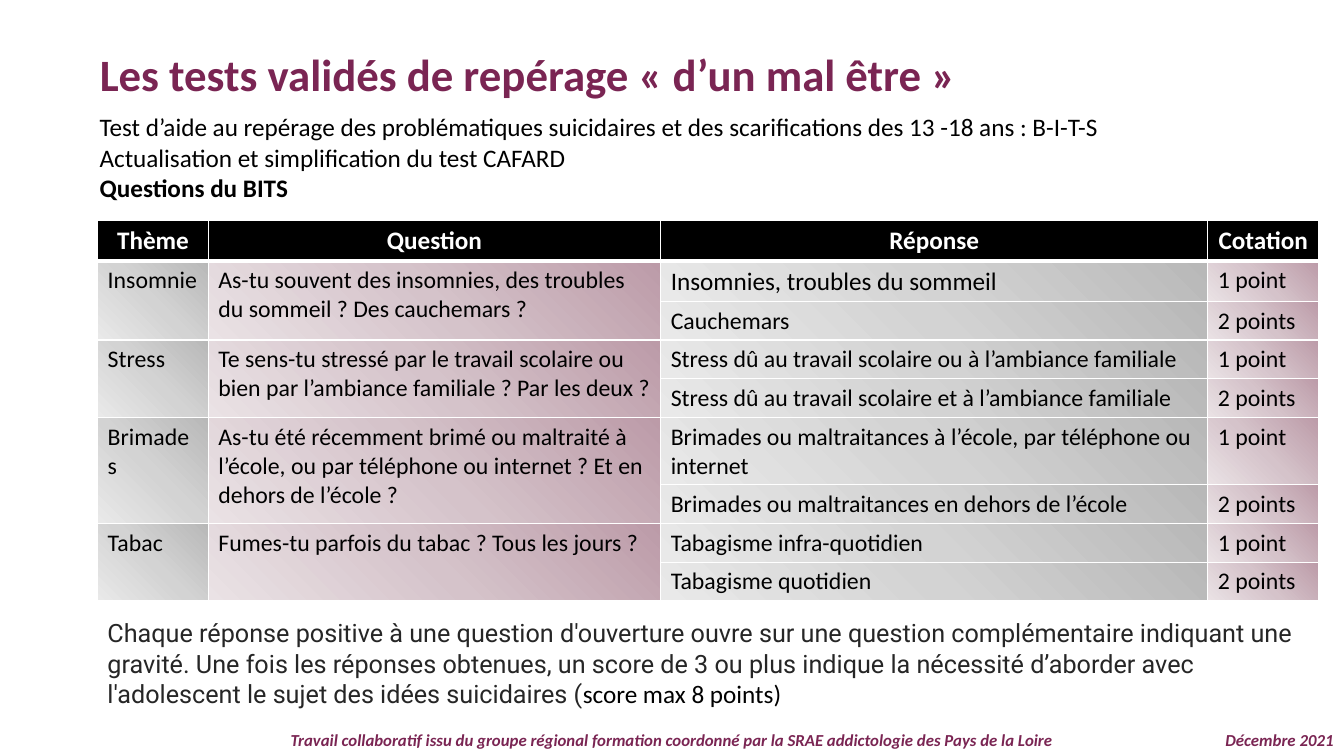
from pptx import Presentation
from pptx.dml.color import RGBColor
from pptx.enum.text import MSO_ANCHOR as Anchor, MSO_AUTO_SIZE as AutoSize, PP_ALIGN as Align
from pptx.oxml import parse_xml
from pptx.oxml.ns import nsdecls
from pptx.util import Cm, Pt

COLORS = {
    "plum": "7A2553", "black": "000000", "white": "FFFFFF", "charcoal": "262626",
}
GRADIENTS = {
    "grey": ("B8B8B8", "D3D3D3", "E9E9E9"),
    "rose": ("BC9BA8", "D5C3CA", "EAE2E5"),
}
HEADERS = ("Thème", "Question", "Réponse", "Cotation")
COLUMN_WIDTHS = (2.79, 11.4, 13.79, 2.79)
COLUMN_GRADIENTS = ("grey", "rose", "grey", "rose")
ROW_HEIGHTS = (0.99, 0.99, 0.94, 0.94, 0.94, 1.65, 0.94, 0.94, 0.94)
THEMES = [
    ("Insomnie", "As-tu souvent des insomnies, des troubles du sommeil ? Des cauchemars ?",
     ("Insomnies, troubles du sommeil", "Cauchemars")),
    ("Stress", "Te sens-tu stressé par le travail scolaire ou bien par l’ambiance familiale ? "
     "Par les deux ?",
     ("Stress dû au travail scolaire ou à l’ambiance familiale",
      "Stress dû au travail scolaire et à l’ambiance familiale")),
    ("Brimades", "As-tu été récemment brimé ou maltraité à l’école, ou par téléphone ou "
     "internet ? Et en dehors de l’école ?",
     ("Brimades ou maltraitances à l’école, par téléphone ou internet",
      "Brimades ou maltraitances en dehors de l’école")),
    ("Tabac", "Fumes-tu parfois du tabac ? Tous les jours ?",
     ("Tabagisme infra-quotidien", "Tabagisme quotidien")),
]
SCORES = ("1 point", "2 points")


class SlideBuilder:
    def __init__(self, slide, font="Calibri"):
        self.slide = slide
        self.font = font

    def style(self, font, size=18, color="black", bold=False, italic=False, name=None):
        font.name = name or self.font
        font.size = Pt(size)
        font.bold = bold
        font.italic = italic
        font.color.rgb = RGBColor.from_string(COLORS[color])

    def place(self, shape, left, top, width, height):
        shape.left, shape.top = Cm(left), Cm(top)
        shape.width, shape.height = Cm(width), Cm(height)

    def title(self, text, box):
        title = self.slide.shapes.title
        self.place(title, *box)
        frame = title.text_frame
        frame.text = text
        frame.auto_size = AutoSize.NONE
        frame.vertical_anchor = Anchor.TOP
        frame.paragraphs[0].alignment = Align.LEFT
        self.style(frame.paragraphs[0].font, 32, "plum", bold=True)

    def text_frame(self, box):
        frame = self.slide.shapes.add_textbox(*map(Cm, box)).text_frame
        frame.word_wrap = True
        return frame

    def lines(self, box, *lines):
        """Add one paragraph for each (text, bold) pair."""
        frame = self.text_frame(box)
        frame.text = "\n".join(text for text, _ in lines)
        for paragraph, (_, bold) in zip(frame.paragraphs, lines):
            self.style(paragraph.font, bold=bold)

    def mixed_paragraph(self, box, *parts):
        """Add one paragraph made of (text, style) runs."""
        paragraph = self.text_frame(box).paragraphs[0]
        for text, look in parts:
            run = paragraph.add_run()
            run.text = text
            self.style(run.font, **look)

    def footer(self, text, box, alignment):
        frame = self.text_frame(box)
        frame.text = text
        frame.vertical_anchor = Anchor.MIDDLE
        paragraph = frame.paragraphs[0]
        paragraph.alignment = alignment
        paragraph.line_spacing = 0.9
        self.style(paragraph.font, 12, "plum", bold=True, italic=True)

    def table(self, left, top, widths, heights):
        table = self.slide.shapes.add_table(
            len(heights), len(widths), Cm(left), Cm(top),
            Cm(sum(widths)), Cm(sum(heights))).table
        table.horz_banding = False
        for column, width in zip(table.columns, widths):
            column.width = Cm(width)
        for row, height in zip(table.rows, heights):
            row.height = Cm(height)
        return table

    def cell_text(self, cell, text, alignment=Align.LEFT, **look):
        cell.text = text
        paragraph = cell.text_frame.paragraphs[0]
        paragraph.alignment = alignment
        self.style(paragraph.font, **look)

    def cell_borders(self, cell, top=1, bottom=1):
        properties = cell._tc.get_or_add_tcPr()
        for side, points in (("L", 1), ("R", 1), ("T", top), ("B", bottom)):
            properties.append(parse_xml(
                f'<a:ln{side} {nsdecls("a")} w="{Pt(points)}"><a:solidFill>'
                f'<a:srgbClr val="{COLORS["white"]}"/></a:solidFill></a:ln{side}>'))

    def cell_gradient(self, cell, gradient):
        """Shade the cell from its top right corner to its bottom left one."""
        stops = "".join(
            f'<a:gs pos="{index * 50000}"><a:srgbClr val="{color}"/></a:gs>'
            for index, color in enumerate(GRADIENTS[gradient]))
        cell._tc.get_or_add_tcPr().append(parse_xml(
            f'<a:gradFill {nsdecls("a")} rotWithShape="1"><a:gsLst>{stops}</a:gsLst>'
            f'<a:lin ang="{135 * 60000}" scaled="0"/></a:gradFill>'))


def add_bits_table(builder):
    table = builder.table(2.46, 5.56, COLUMN_WIDTHS, ROW_HEIGHTS)
    for column, header in enumerate(HEADERS):
        cell = table.cell(0, column)
        builder.cell_text(cell, header, Align.CENTER, color="white", bold=True)
        builder.cell_borders(cell, bottom=3)
        cell.fill.solid()
        cell.fill.fore_color.rgb = RGBColor.from_string(COLORS["black"])
    table.cell(0, 1).vertical_anchor = Anchor.MIDDLE

    for row in range(1, len(ROW_HEIGHTS)):
        for column, gradient in enumerate(COLUMN_GRADIENTS):
            cell = table.cell(row, column)
            builder.cell_borders(cell, top=3 if row == 1 else 1)
            builder.cell_gradient(cell, gradient)

    for index, (theme, question, answers) in enumerate(THEMES):
        first_row = 1 + 2 * index
        for column, text in enumerate((theme, question)):
            cell = table.cell(first_row, column)
            cell.merge(table.cell(first_row + 1, column))
            builder.cell_text(cell, text, size=17)
        for row, (answer, score) in enumerate(zip(answers, SCORES), first_row):
            builder.cell_text(table.cell(row, 2), answer, size=18 if row == 1 else 17)
            builder.cell_text(table.cell(row, 3), score, size=17)


def main():
    presentation = Presentation()
    presentation.slide_width, presentation.slide_height = Cm(33.87), Cm(19.05)
    title_only = presentation.slide_layouts[5]
    builder = SlideBuilder(presentation.slides.add_slide(title_only))

    builder.footer("Travail collaboratif issu du groupe régional formation coordonné par la "
                   "SRAE addictologie des Pays de la Loire",
                   (0, 18.29, 33.87, 0.76), Align.CENTER)
    builder.footer("Décembre 2021", (29.9, 18.29, 3.96, 0.76), Align.RIGHT)
    builder.lines(
        (2.26, 2.69, 30.96, 2.57),
        ("Test d’aide au repérage des problématiques suicidaires et des scarifications "
         "des 13 -18 ans : B-I-T-S", False),
        ("Actualisation et simplification du test CAFARD", False),
        ("Questions du BITS", True))
    builder.title("Les tests validés de repérage « d’un mal être »", (2.26, 1.04, 29.67, 1.63))
    builder.mixed_paragraph(
        (2.46, 15.44, 30.56, 2.57),
        ("Chaque réponse positive à une question d'ouverture ouvre sur une question "
         "complémentaire indiquant une gravité. Une fois les réponses obtenues, un score de 3 "
         "ou plus indique la nécessité d’aborder avec l'adolescent le sujet des idées "
         "suicidaires (", {"name": "Roboto", "color": "charcoal"}),
        ("score max 8 points)", {}))
    add_bits_table(builder)
    presentation.save("out.pptx")


if __name__ == "__main__":
    main()
